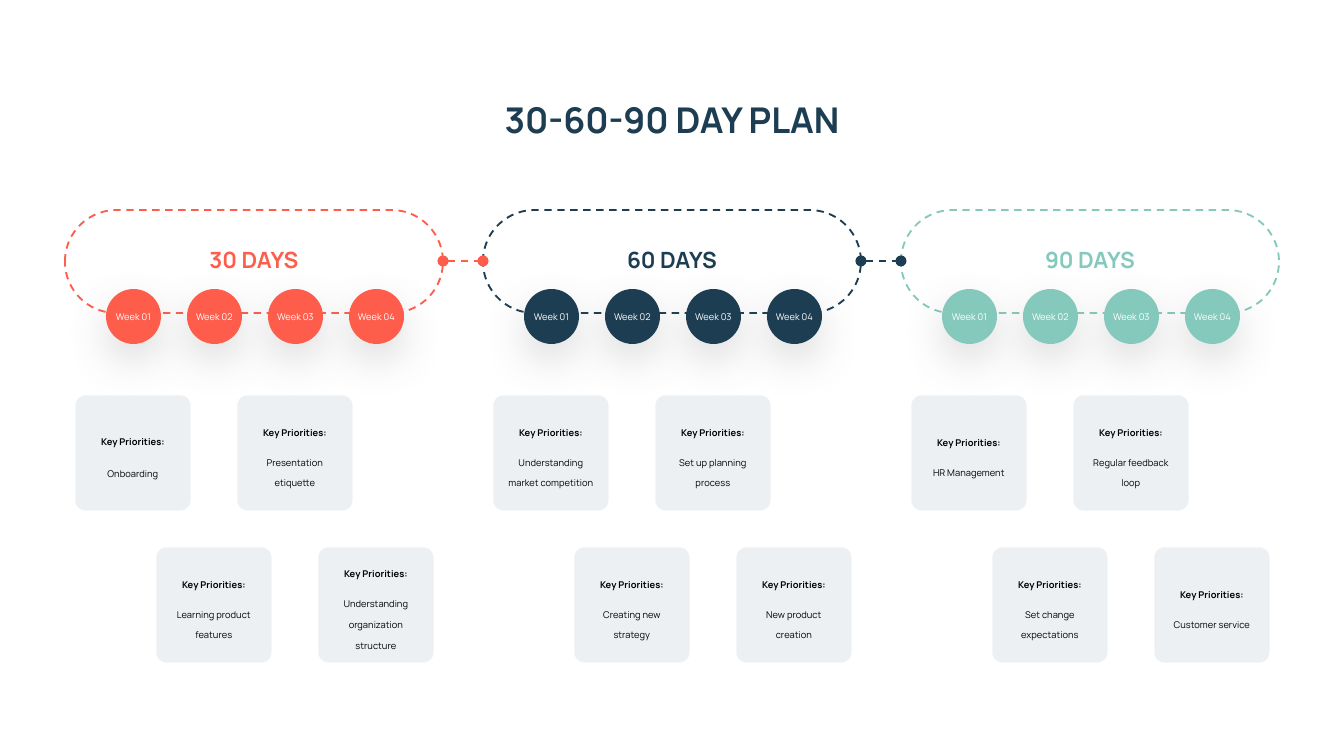
from dataclasses import dataclass

from lxml.etree import SubElement
from pptx import Presentation
from pptx.dml.color import RGBColor
from pptx.enum.dml import MSO_LINE
from pptx.enum.shapes import MSO_CONNECTOR, MSO_SHAPE
from pptx.enum.text import MSO_ANCHOR as Anchor, MSO_AUTO_SIZE, PP_ALIGN
from pptx.oxml.ns import qn
from pptx.util import Pt

PX = 9144000 / 1344  # EMU per px
SLIDE_W, SLIDE_H = 1344, 756
FONT = "Manrope"

CORAL = RGBColor(0xFF, 0x5D, 0x4C)
NAVY = RGBColor(0x1C, 0x3D, 0x52)
MINT = RGBColor(0x85, 0xC9, 0xBD)
CARD_GREY = RGBColor(0xED, 0xF0, 0xF3)
WHITE = RGBColor(0xFF, 0xFF, 0xFF)
BLACK = RGBColor(0x00, 0x00, 0x00)

# Phases repeat across the slide, weeks repeat inside a phase
PHASE_LEFT, PHASE_STEP = 65, 418
PILL_TOP, PILL_W, PILL_H = 210, 378, 103
WEEK_INSET, WEEK_STEP, WEEK_TOP, WEEK_D = 41, 81, 289, 55
CARD_INSET, CARD_SIDE = 9, 118
CARD_TOPS = (394, 546)


@dataclass(frozen=True)
class Priority:
    text: str
    spacing: float = 1.86


@dataclass(frozen=True)
class Phase:
    heading: str
    color: RGBColor
    priorities: tuple[Priority, ...]


PHASES = (
    Phase("30 DAYS", CORAL, (
        Priority("Onboarding", 2.0),
        Priority("Learning product features"),
        Priority("Presentation etiquette"),
        Priority("Understanding organization structure"))),
    Phase("60 DAYS", NAVY, (
        Priority("Understanding market competition"),
        Priority("Creating new strategy"),
        Priority("Set up planning process"),
        Priority("New product creation"))),
    Phase("90 DAYS", MINT, (
        Priority("HR Management"),
        Priority("Set change expectations"),
        Priority("Regular feedback loop"),
        Priority("Customer service"))),
)


def px(*lengths: int) -> list[int]:
    return [round(length * PX) for length in lengths]


def set_frame(frame, anchor: Anchor, side: int = 10) -> None:
    frame.word_wrap = True
    frame.auto_size = MSO_AUTO_SIZE.NONE
    frame.vertical_anchor = anchor
    frame.margin_left, frame.margin_right = px(side, side)
    frame.margin_top, frame.margin_bottom = px(5, 5)


def style(paragraph, size: int, color: RGBColor, bold: bool = False,
          spacing: float = 1.0) -> None:
    paragraph.alignment = PP_ALIGN.CENTER
    paragraph.line_spacing = spacing
    for run in paragraph.runs:
        run.font.name, run.font.size, run.font.bold = FONT, Pt(size), bold
        run.font.color.rgb = color


def add_soft_shadow(shape) -> None:
    effects = shape._element.spPr.find(qn("a:effectLst"))
    shadow = SubElement(effects, qn("a:outerShdw"), blurRad=str(Pt(22)),
                        dist=str(Pt(8.9)), dir=str(91 * 60000),
                        algn="t", rotWithShape="0")
    color = SubElement(shadow, qn("a:srgbClr"), val="7F7F7F")
    SubElement(color, qn("a:alpha"), val="26000")


def add_card(shapes, left: int, top: int, priority: Priority) -> None:
    card = shapes.add_shape(MSO_SHAPE.ROUNDED_RECTANGLE,
                            *px(left, top, CARD_SIDE, CARD_SIDE))
    card.shadow.inherit = False
    card.adjustments[0] = 0.095
    card.fill.solid()
    card.fill.fore_color.rgb = CARD_GREY
    card.line.color.rgb = WHITE
    card.line.width = Pt(1.5)
    frame = card.text_frame
    set_frame(frame, Anchor.MIDDLE)
    frame.text = f"Key Priorities:\n{priority.text}"
    label, detail = frame.paragraphs
    style(label, 5, BLACK, bold=True, spacing=1.86)
    style(detail, 5, BLACK, spacing=priority.spacing)
    detail.space_before = Pt(5)


def add_pill(shapes, left: int, phase: Phase) -> None:
    pill = shapes.add_shape(MSO_SHAPE.ROUNDED_RECTANGLE,
                            *px(left, PILL_TOP, PILL_W, PILL_H))
    pill.shadow.inherit = False
    pill.adjustments[0] = 0.5
    pill.fill.background()
    pill.line.color.rgb = phase.color
    pill.line.width = Pt(1)
    pill.line.dash_style = MSO_LINE.DASH
    heading = shapes.add_textbox(*px(left + 131, 241, 116, 38))
    set_frame(heading.text_frame, Anchor.TOP)
    heading.text_frame.text = phase.heading
    style(heading.text_frame.paragraphs[0], 12, phase.color, bold=True)


def add_week(shapes, left: int, number: int, color: RGBColor) -> None:
    week = shapes.add_shape(MSO_SHAPE.OVAL, *px(left, WEEK_TOP, WEEK_D, WEEK_D))
    week.shadow.inherit = False
    week.fill.solid()
    week.fill.fore_color.rgb = color
    week.line.fill.background()
    add_soft_shadow(week)
    set_frame(week.text_frame, Anchor.MIDDLE, side=0)
    week.text_frame.text = f"Week {number:02d}"
    style(week.text_frame.paragraphs[0], 5, WHITE)


def add_link(shapes, start: int, end: int, color: RGBColor) -> None:
    middle = PILL_TOP + PILL_H // 2
    link = shapes.add_connector(MSO_CONNECTOR.STRAIGHT,
                                *px(start, middle, end, middle))
    link.line.color.rgb = color
    link.line.width = Pt(1)
    link.line.dash_style = MSO_LINE.DASH
    outline = link.line._get_or_add_ln()
    for end_tag in ("a:headEnd", "a:tailEnd"):
        SubElement(outline, qn(end_tag), type="oval")
    SubElement(link._element.spPr, qn("a:effectLst"))


def main() -> None:
    prs = Presentation()
    prs.slide_width, prs.slide_height = px(SLIDE_W, SLIDE_H)
    slide = prs.slides.add_slide(prs.slide_layouts[5])
    shapes = slide.shapes

    # Title
    title = shapes.title
    title.left, title.top, title.width, title.height = px(483, 78, 378, 56)
    set_frame(title.text_frame, Anchor.TOP)
    title.text_frame.text = "30-60-90 DAY PLAN"
    style(title.text_frame.paragraphs[0], 19, NAVY, bold=True, spacing=1.36)

    lefts = [PHASE_LEFT + i * PHASE_STEP for i in range(len(PHASES))]

    # Priority cards, alternating between two rows
    for left, phase in zip(lefts, PHASES):
        for i, priority in enumerate(phase.priorities):
            add_card(shapes, left + CARD_INSET + i * WEEK_STEP,
                     CARD_TOPS[i % 2], priority)

    # Phase outlines with their weeks
    for left, phase in zip(lefts, PHASES):
        add_pill(shapes, left, phase)
        for i in range(len(phase.priorities)):
            add_week(shapes, left + WEEK_INSET + i * WEEK_STEP, i + 1, phase.color)

    # Links from each phase to the next
    for left, following, phase in zip(lefts, lefts[1:], PHASES):
        add_link(shapes, left + PILL_W, following, phase.color)

    prs.save("out.pptx")


if __name__ == "__main__":
    main()
